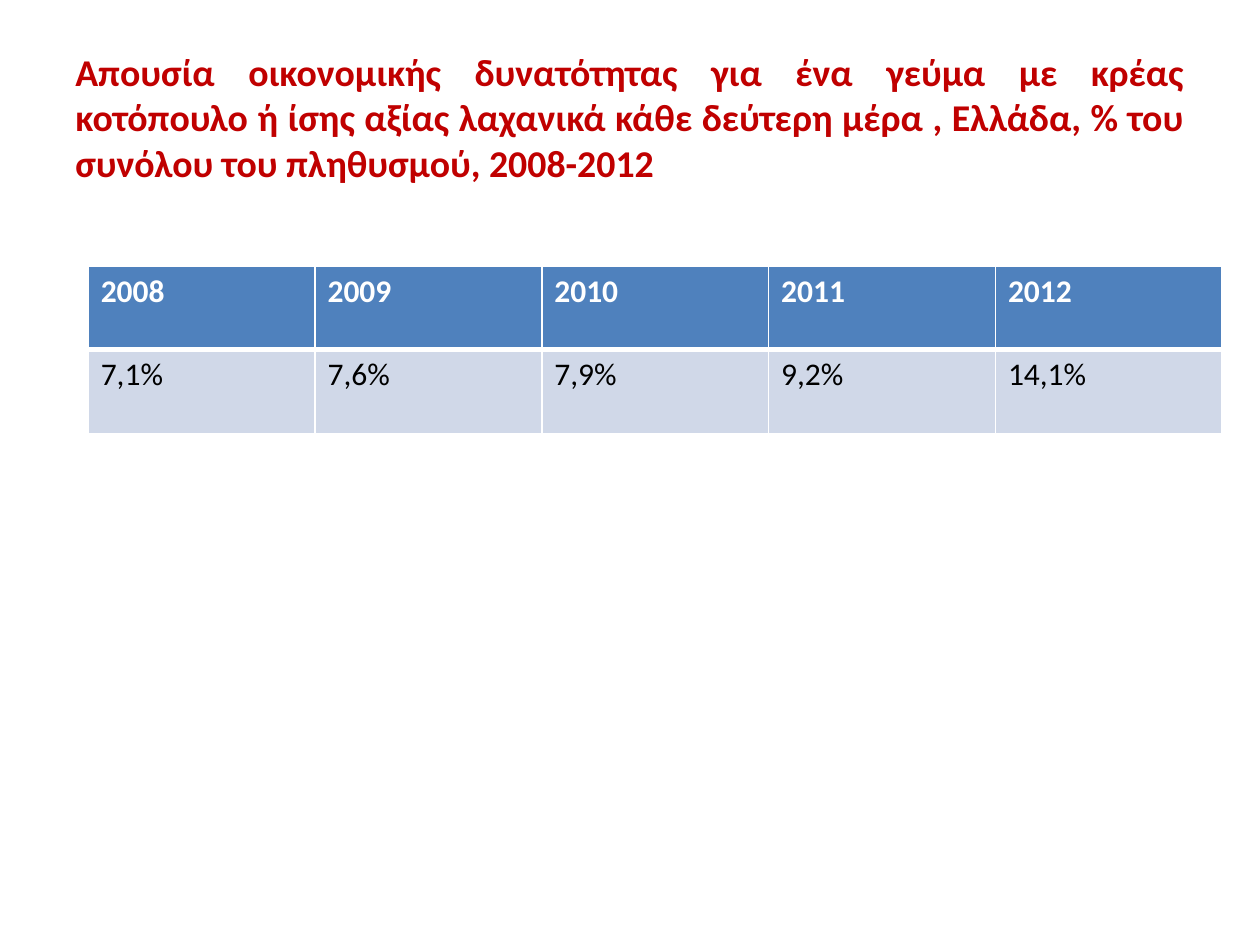
from lxml import etree
from pptx import Presentation
from pptx import util as u
from pptx.dml.color import RGBColor
from pptx.enum import text
from pptx.oxml.ns import qn

# Content
TITLE = ("Απουσία οικονομικής δυνατότητας για ένα γεύμα με κρέας κοτόπουλο "
         "ή ίσης αξίας λαχανικά κάθε δεύτερη μέρα , Ελλάδα, % του συνόλου "
         "του πληθυσμού, 2008-2012")
ROWS = [
    ["2008", "2009", "2010", "2011", "2012"],
    ["7,1%", "7,6%", "7,9%", "9,2%", "14,1%"],
]

THEME = {
    "font": "Calibri",
    "title": {"size": 21.6, "color": "C00000", "bold": True},
    "header": {"size": 18, "color": "FFFFFF", "bold": True, "fill": "4F81BD"},
    "body": {"size": 18, "color": "000000", "bold": False, "fill": "D0D8E8"},
    "border": "FFFFFF", "thin": 1, "thick": 3,
}


def add_run(p, words, style):
    r = p.add_run()
    r.text = words
    r.font.name = THEME["font"]
    r.font.size = u.Pt(style["size"])
    r.font.bold = style["bold"]
    r.font.color.rgb = RGBColor.from_string(style["color"])


def set_borders(cell, widths):
    tcPr = cell._tc.get_or_add_tcPr()
    for side, width in widths.items():
        ln = etree.SubElement(tcPr, qn(f"a:ln{side}"), w=str(u.Pt(width)))
        fill = etree.SubElement(ln, qn("a:solidFill"))
        etree.SubElement(fill, qn("a:srgbClr"), val=THEME["border"])


def add_title(s):
    sp = s.shapes.add_textbox(u.Inches(0.5), u.Inches(0.3), u.Inches(9), u.Inches(1.25))
    tf = sp.text_frame
    tf.word_wrap = True
    tf.vertical_anchor = text.MSO_ANCHOR.MIDDLE
    p = tf.paragraphs[0]
    p.alignment = text.PP_ALIGN.JUSTIFY
    add_run(p, TITLE, THEME["title"])


def add_rates(s):
    frame = s.shapes.add_table(len(ROWS), len(ROWS[0]), u.Inches(0.7), u.Inches(2.11),
                               u.Inches(9), u.Inches(1.33))
    table = frame.table
    table.horz_banding = False
    thin, thick = THEME["thin"], THEME["thick"]
    for i, row in enumerate(ROWS):
        style = THEME["body" if i else "header"]
        # A thick rule separates the years from the rates
        widths = {"L": thin, "R": thin, "T": thick if i else thin, "B": thin if i else thick}
        for j, words in enumerate(row):
            cell = table.cell(i, j)
            set_borders(cell, widths)
            cell.fill.solid()
            cell.fill.fore_color.rgb = RGBColor.from_string(style["fill"])
            add_run(cell.text_frame.paragraphs[0], words, style)


def main():
    prs = Presentation()
    prs.slide_width, prs.slide_height = u.Inches(10), u.Inches(7.5)
    s = prs.slides.add_slide(prs.slide_layouts[6])
    add_title(s)
    add_rates(s)
    prs.save("out.pptx")


if __name__ == "__main__":
    main()
